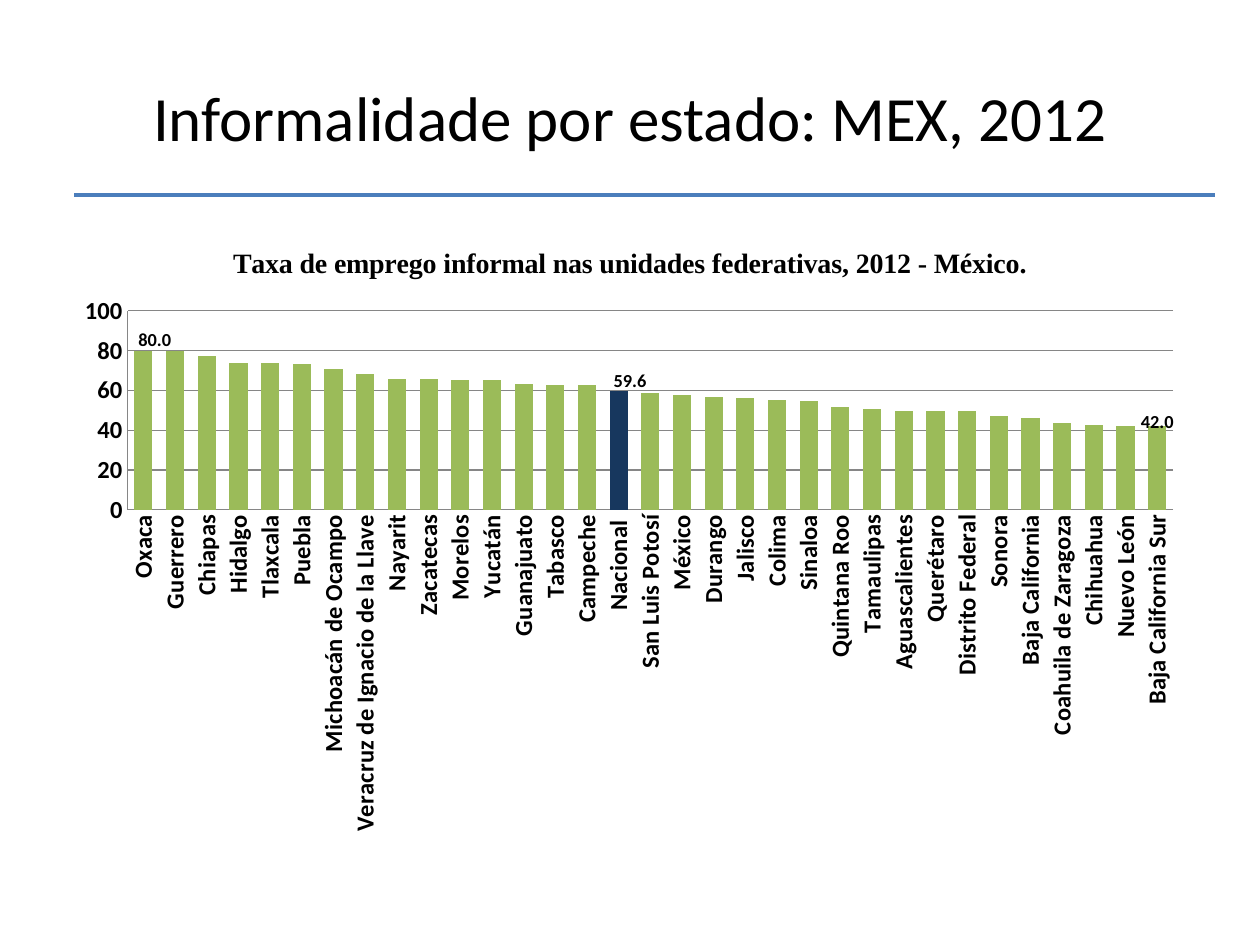
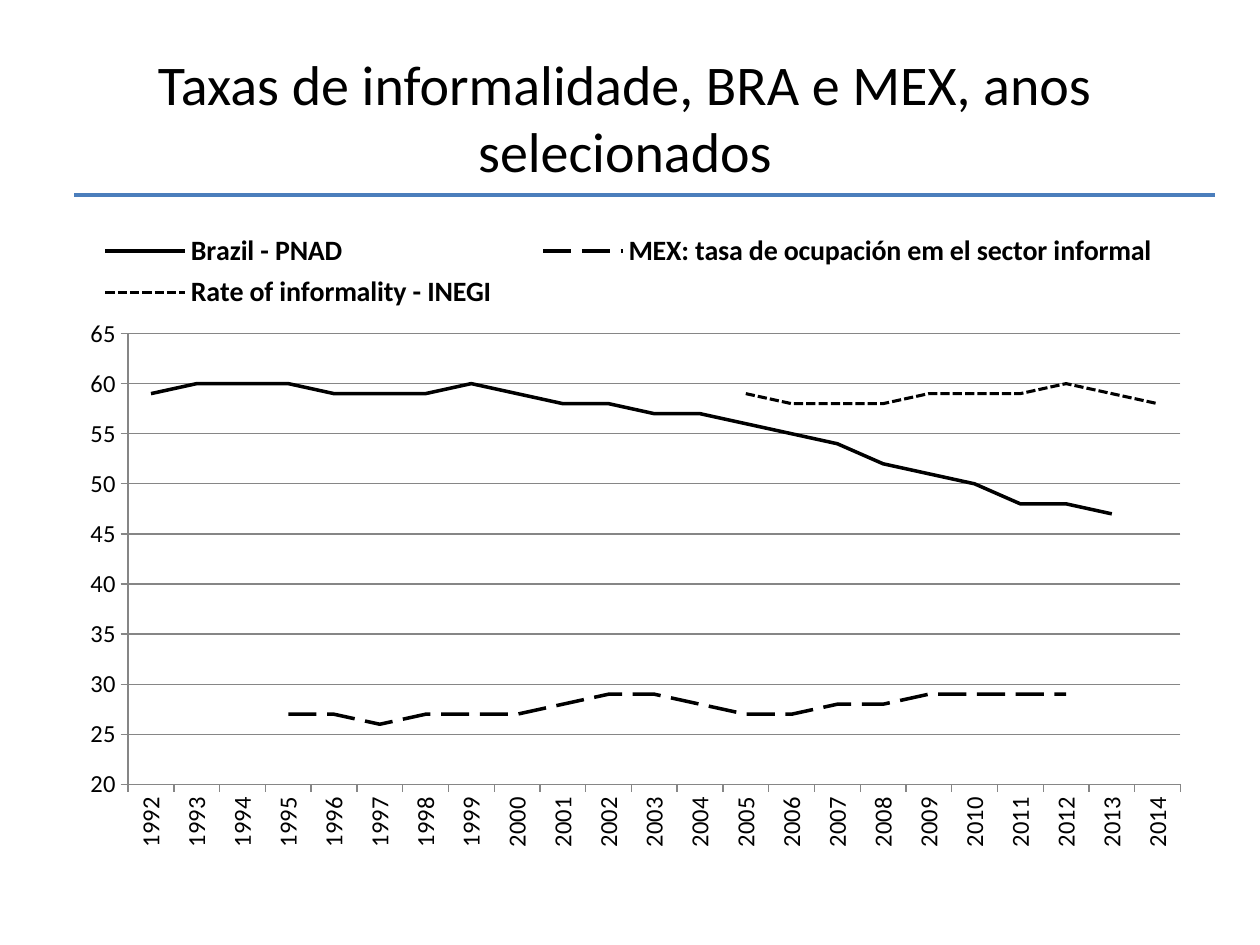
from pptx import Presentation
from pptx.chart.data import CategoryChartData
from pptx.dml.color import RGBColor
from pptx.enum.chart import (XL_CHART_TYPE as ChartType, XL_LABEL_POSITION as LabelPosition,
                             XL_LEGEND_POSITION as LegendPosition, XL_TICK_MARK as TickMark)
from pptx.enum.dml import MSO_LINE as Dash
from pptx.enum.shapes import MSO_CONNECTOR as Connector
from pptx.enum.text import MSO_ANCHOR as Anchor, PP_ALIGN as Align
from pptx.oxml import parse_xml
from pptx.oxml.ns import nsdecls, qn
from pptx.util import Pt

COLORS = {"text": "000000", "rule": "4B7EBC", "grid": "868686",
          "state": "9BBB59", "national": "17375E"}


def style_font(font, size, bold=False, name="Calibri"):
    for key, value in {"size": Pt(size), "bold": bold, "name": name}.items():
        setattr(font, key, value)
    font.color.rgb = RGBColor.from_string(COLORS["text"])


def place(part, index, **fractions):
    """Place a chart part in fractions of the chart frame (a data label: shift it);
    index is the child position of its layout."""
    for old in part.findall(qn("c:layout")):
        part.remove(old)
    target = '<c:layoutTarget val="inner"/>' if part.tag == qn("c:plotArea") else ""
    modes = "" if part.tag == qn("c:dLbl") else '<c:xMode val="edge"/><c:yMode val="edge"/>'
    values = "".join(f'<c:{key} val="{value}"/>' for key, value in fractions.items())
    part.insert(index, parse_xml(
        f'<c:layout {nsdecls("c")}><c:manualLayout>{target}{modes}{values}'
        '</c:manualLayout></c:layout>'))


state_rates = {
    "Oxaca": 80.0, "Guerrero": 79.9, "Chiapas": 77.3, "Hidalgo": 73.8, "Tlaxcala": 73.6,
    "Puebla": 73.1, "Michoacán de Ocampo": 70.9, "Veracruz de Ignacio de la Llave": 68.1,
    "Nayarit": 65.8, "Zacatecas": 65.8, "Morelos": 65.4, "Yucatán": 65.0,
    "Guanajuato": 63.2, "Tabasco": 62.9, "Campeche": 62.6, "Nacional ": 59.6,
    "San Luis Potosí": 58.8, "México": 57.9, "Durango": 56.8, "Jalisco": 56.2,
    "Colima": 55.1, "Sinaloa": 54.6, "Quintana Roo": 51.7, "Tamaulipas": 50.7,
    "Aguascalientes": 49.8, "Querétaro": 49.7, "Distrito Federal": 49.5, "Sonora": 47.1,
    "Baja California": 46.1, "Coahuila de Zaragoza": 43.6, "Chihuahua": 42.6,
    "Nuevo León": 42.3, "Baja California Sur": 42.0,
}
state_data = CategoryChartData(number_format="0.0")
state_data.categories = list(state_rates)
state_data.add_series("Series 1", list(state_rates.values()))

years = range(1992, 2015)
# name, first year, values, line width, dash
rate_lines = [
    ("Brazil - PNAD", 1992,
     [59, 60, 60, 60, 59, 59, 59, 60, 59, 58, 58, 57, 57, 56, 55, 54, 52, 51, 50, 48, 48, 47],
     2, Dash.SOLID),
    ("MEX: tasa de ocupación em el sector informal", 1995,
     [27, 27, 26, 27, 27, 27, 28, 29, 29, 28, 27, 27, 28, 28, 29, 29, 29, 29],
     2, Dash.LONG_DASH),
    ("Rate of informality - INEGI", 2005,
     [59, 58, 58, 58, 59, 59, 59, 60, 59, 58], 1.75, Dash.SQUARE_DOT),
]
year_data = CategoryChartData(number_format="0")
year_data.categories = [str(year) for year in years]
for name, first, values, width, dash in rate_lines:
    before = [None] * (first - years[0])
    after = [None] * (len(years) - len(before) - len(values))
    year_data.add_series(name, before + values + after)

pages = [
    {"title": "Informalidade por estado: MEX, 2012", "size": 36, "title_box": (36, 648),
     "type": ChartType.COLUMN_CLUSTERED, "data": state_data, "chart_size": (648, 356.4),
     "bold": True, "tick": TickMark.NONE, "scale": (0, 100, 20),
     "plot": {"x": 0.057, "y": 0.145, "w": 0.922, "h": 0.319}},
    {"title": "Taxas de informalidade, BRA e MEX, anos selecionados", "size": 32,
     "title_box": (20, 674.4),
     "type": ChartType.LINE, "data": year_data, "chart_size": (653, 365),
     "bold": False, "tick": TickMark.OUTSIDE, "scale": (20, 65, 5),
     "plot": {"x": 0.057, "y": 0.177, "w": 0.921, "h": 0.706}},
]

deck = Presentation()
deck.slide_width, deck.slide_height = Pt(720), Pt(540)
charts = []

for layout in pages:
    page = deck.slides.add_slide(deck.slide_layouts[6])

    left, width = layout["title_box"]
    box = page.shapes.add_textbox(Pt(left), Pt(21.6), Pt(width), Pt(90))
    box.text_frame.word_wrap = True
    box.text_frame.vertical_anchor = Anchor.MIDDLE
    para = box.text_frame.paragraphs[0]
    para.alignment = Align.CENTER
    span = para.add_run()
    span.text = layout["title"]
    style_font(span.font, layout["size"])

    width, height = layout["chart_size"]
    chart = page.shapes.add_chart(layout["type"], Pt(36), Pt(126), Pt(width), Pt(height),
                                  layout["data"]).chart
    charts.append(chart)
    style_font(chart.font, 10)
    chart.has_title = chart.has_legend = False
    chart.plots[0].vary_by_categories = False
    place(chart.element.xpath("c:chart/c:plotArea")[0], 0, **layout["plot"])

    values_axis = chart.value_axis
    values_axis.minimum_scale, values_axis.maximum_scale, values_axis.major_unit = layout["scale"]
    values_axis.tick_labels.number_format = "0"
    values_axis.tick_labels.number_format_is_linked = False
    values_axis.has_major_gridlines = True
    for axis in (chart.category_axis, values_axis):
        style_font(axis.tick_labels.font, 14, layout["bold"])
        axis.major_tick_mark = layout["tick"]
        axis.minor_tick_mark = TickMark.NONE
    for line in (chart.category_axis.format.line, values_axis.format.line,
                 values_axis.major_gridlines.format.line):
        line.color.rgb = RGBColor.from_string(COLORS["grid"])
        line.width = Pt(0.75)
    label_body = chart.element.xpath(".//c:catAx/c:txPr/a:bodyPr")[0]
    label_body.set("rot", "-5400000")
    label_body.set("vert", "horz")

    rule = page.shapes.add_connector(Connector.STRAIGHT, Pt(42.5), Pt(111.6), Pt(694.4), Pt(111.6))
    rule.line.color.rgb = RGBColor.from_string(COLORS["rule"])
    rule.line.width = Pt(2.25)
    rule.element.spPr.append(parse_xml(f'<a:effectLst {nsdecls("a")}/>'))

state_chart, year_chart = charts

state_chart.has_title = True
heading = state_chart.chart_title.text_frame
heading.text = "Taxa de emprego informal nas unidades federativas, 2012 - México."
style_font(heading.paragraphs[0].runs[0].font, 16, True, "Times New Roman")
state_chart.chart_title.include_in_layout = False

state_plot = state_chart.plots[0]
state_plot.gap_width, state_plot.overlap = 75, -25
bars = state_plot.series[0]
bars.format.fill.solid()
bars.format.fill.fore_color.rgb = RGBColor.from_string(COLORS["state"])
national = list(state_rates).index("Nacional ")
national_fill = bars.points[national].format.fill
national_fill.solid()
national_fill.fore_color.rgb = RGBColor.from_string(COLORS["national"])
label_shifts = {0: (0.01, 0.01), national: (0.01, 0.01), len(state_rates) - 1: (0, 0.02)}
for index in label_shifts:
    label = bars.points[index].data_label
    style_font(label.font, 10.5, True)
    label.position = LabelPosition.OUTSIDE_END
for element, (right, down) in zip(state_chart.element.xpath(".//c:dLbl"), label_shifts.values()):
    place(element, 1, x=right, y=down)

for series, (name, first, values, width, dash) in zip(year_chart.plots[0].series, rate_lines):
    series.smooth = False
    line = series.format.line
    line.color.rgb = RGBColor.from_string(COLORS["text"])
    line.width, line.dash_style = Pt(width), dash

year_chart.has_legend = True
legend = year_chart.legend
legend.position = LegendPosition.TOP
legend.include_in_layout = False
style_font(legend.font, 16, True)
place(year_chart.element.xpath("c:chart/c:legend")[0], 1, x=0, y=0.01, w=0.99, h=0.14)

deck.save("out.pptx")
